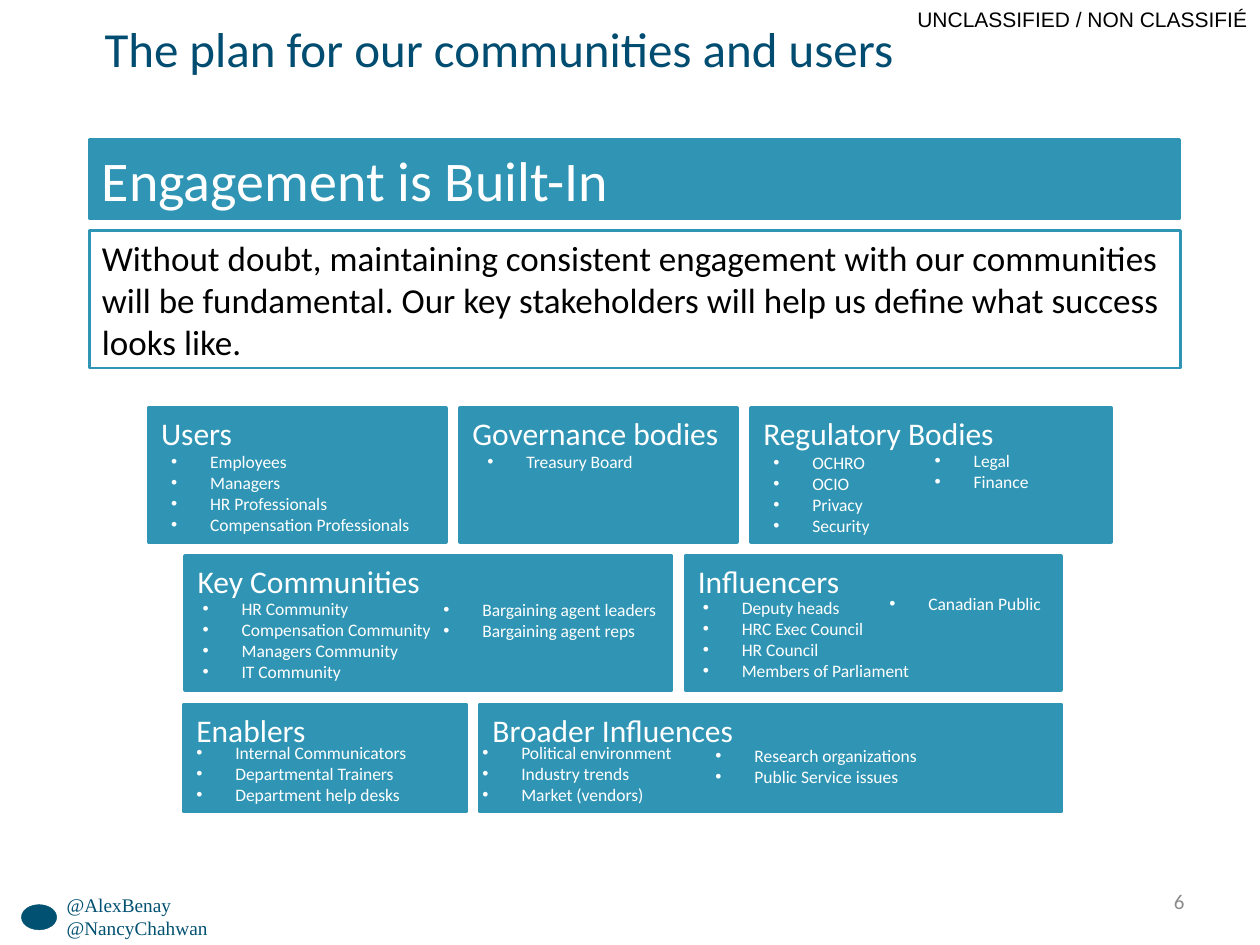
from dataclasses import dataclass
from typing import Optional

from lxml.etree import SubElement
from pptx import Presentation
from pptx.dml.color import RGBColor
from pptx.enum.shapes import MSO_SHAPE as Shape
from pptx.enum.text import MSO_ANCHOR as Anchor, PP_ALIGN as Align
from pptx.oxml.ns import qn
from pptx.util import Inches, Pt

TEAL = RGBColor(0x30, 0x95, 0xB4)
NAVY = RGBColor(0x00, 0x4D, 0x71)
HANDLE_BLUE = RGBColor(0x00, 0x51, 0x72)
GREY = RGBColor(0x8C, 0x8C, 0x8C)
BLACK = RGBColor(0, 0, 0)
WHITE = RGBColor(255, 255, 255)

COLUMNS, ROWS = 100, 75
WIDTH, HEIGHT = Inches(10), Inches(7.5)
PANEL_GAP = 1.1
FIRST_ROW, ROW_PITCH = 32.4, 11.75
LIST_WIDTH, LINE_ROWS, LIST_PADDING = 21.6, 1.68, 1
INDENT = Inches(0.31)


@dataclass(frozen=True)
class Area:
    left: float
    top: float
    width: float
    height: float

    def emu(self) -> tuple[int, int, int, int]:
        column, row = WIDTH / COLUMNS, HEIGHT / ROWS
        return (round(self.left * column), round(self.top * row),
                round(self.width * column), round(self.height * row))


@dataclass(frozen=True)
class Style:
    size: float
    color: RGBColor
    font: str = "Calibri"
    align: Align = Align.LEFT
    anchor: Anchor = Anchor.TOP


@dataclass(frozen=True)
class Bullets:
    right: float
    down: float
    items: tuple[str, ...]


@dataclass(frozen=True)
class Panel:
    heading: str
    width: float
    lists: tuple[Bullets, ...]


@dataclass(frozen=True)
class PanelRow:
    left: float
    height: float
    panels: tuple[Panel, ...]


PANEL_ROWS = (
    PanelRow(11.8, 10.6, (
        Panel("Users", 23.6, (
            Bullets(0.8, 2.9, ("Employees", "Managers", "HR Professionals",
                               "Compensation Professionals")),)),
        Panel("Governance bodies", 22, (
            Bullets(1.2, 2.9, ("Treasury Board",)),)),
        Panel("Regulatory Bodies", 28.6, (
            Bullets(0.8, 3, ("OCHRO", "OCIO", "Privacy", "Security")),
            Bullets(13.6, 2.8, ("Legal", "Finance")))),
    )),
    PanelRow(14.7, 10.6, (
        Panel("Key Communities", 38.6, (
            Bullets(0.4, 2.8, ("HR Community", "Compensation Community",
                               "Managers Community", "IT Community")),
            Bullets(19.5, 2.9, ("Bargaining agent leaders", "Bargaining agent reps")))),
        Panel("Influencers", 29.8, (
            Bullets(0.4, 2.7, ("Deputy heads", "HRC Exec Council", "HR Council",
                               "Members of Parliament")),
            Bullets(15.2, 2.4, ("Canadian Public",)))),
    )),
    PanelRow(14.6, 8.5, (
        Panel("Enablers", 22.4, (
            Bullets(0, 2.5, ("Internal Communicators", "Departmental Trainers",
                             "Department help desks")),)),
        Panel("Broader Influences", 46.1, (
            Bullets(-0.8, 2.5, ("Political environment", "Industry trends",
                                "Market (vendors)")),
            Bullets(17.7, 2.7, ("Research organizations", "Public Service issues")))),
    )),
)


def write(frame, text: str, style: Style) -> None:
    """Fill a text frame and format every run in it."""
    frame.text = text
    frame.word_wrap = True
    frame.vertical_anchor = style.anchor
    for paragraph in frame.paragraphs:
        paragraph.alignment = style.align
        for run in paragraph.runs:
            run.font.size = Pt(style.size)
            run.font.name = style.font
            run.font.color.rgb = style.color


def add_label(slide, area: Area, text: str, style: Style):
    """Add a text box and return its text frame."""
    frame = slide.shapes.add_textbox(*area.emu()).text_frame
    write(frame, text, style)
    return frame


def add_block(slide, kind: Shape, area: Area, text: str, style: Style,
              fill: Optional[RGBColor], line: RGBColor, line_width: float) -> None:
    """Add an outlined shape with text, filled when a fill is given."""
    block = slide.shapes.add_shape(kind, *area.emu())
    block.shadow.inherit = False
    if fill is None:
        block.fill.background()
    else:
        block.fill.solid()
        block.fill.fore_color.rgb = fill
    block.line.color.rgb = line
    block.line.width = Pt(line_width)
    write(block.text_frame, text, style)


def add_bullets(slide, left: float, top: float, items: tuple[str, ...]) -> None:
    """Add a bulleted list sized by its number of items."""
    area = Area(left, top, LIST_WIDTH, LIST_PADDING + LINE_ROWS * len(items))
    frame = add_label(slide, area, "\n".join(items), Style(10, WHITE))
    for paragraph in frame.paragraphs:
        properties = paragraph._p.get_or_add_pPr()
        properties.set("marL", str(INDENT))
        properties.set("indent", str(-INDENT))
        SubElement(properties, qn("a:buFont")).set("typeface", "Arial")
        SubElement(properties, qn("a:buChar")).set("char", "•")


def add_panel_row(slide, row: PanelRow, top: float) -> None:
    """Lay out one row of panels from left to right."""
    left = row.left
    for panel in row.panels:
        add_block(slide, Shape.FLOWCHART_PROCESS, Area(left, top, panel.width, row.height),
                  panel.heading, Style(18, WHITE), TEAL, TEAL, 2)
        left += panel.width + PANEL_GAP
    left = row.left
    for panel in row.panels:
        for bullets in panel.lists:
            add_bullets(slide, left + bullets.right, top + bullets.down, bullets.items)
        left += panel.width + PANEL_GAP


def main() -> None:
    """Build the engagement slide and save it."""
    deck = Presentation()
    deck.slide_width, deck.slide_height = WIDTH, HEIGHT
    slide = deck.slides.add_slide(deck.slide_layouts[6])

    add_label(slide, Area(0, 0, 100, 3), "UNCLASSIFIED / NON CLASSIFIÉ",
              Style(12, BLACK, "Arial", Align.RIGHT))
    add_block(slide, Shape.OVAL, Area(1.7, 71.8, 2.8, 2), "", Style(11, WHITE),
              HANDLE_BLUE, HANDLE_BLUE, 0.25)
    add_label(slide, Area(4.3, 70.4, 24.3, 4.7), "@AlexBenay\n@NancyChahwan",
              Style(11, HANDLE_BLUE, "Times New Roman"))
    add_label(slide, Area(71.7, 69.5, 23.3, 4), "6",
              Style(12, GREY, align=Align.RIGHT, anchor=Anchor.MIDDLE))

    title = add_label(slide, Area(8.3, 1.5, 67.3, 9.6),
                      "The plan for our communities and users", Style(28, NAVY))
    title.margin_left = title.margin_right = title.margin_top = title.margin_bottom = 0

    add_block(slide, Shape.RECTANGLE, Area(7.1, 11.1, 86.5, 6.3), "Engagement is Built-In",
              Style(32, WHITE, anchor=Anchor.MIDDLE), TEAL, TEAL, 1.5)
    add_block(slide, Shape.RECTANGLE, Area(7.1, 18.3, 86.6, 10.9),
              "Without doubt, maintaining consistent engagement with our communities "
              "will be fundamental. Our key stakeholders will help us define what "
              "success looks like.", Style(20, BLACK), None, TEAL, 1.5)

    for index, row in enumerate(PANEL_ROWS):
        add_panel_row(slide, row, FIRST_ROW + index * ROW_PITCH)

    deck.save("out.pptx")


if __name__ == "__main__":
    main()
